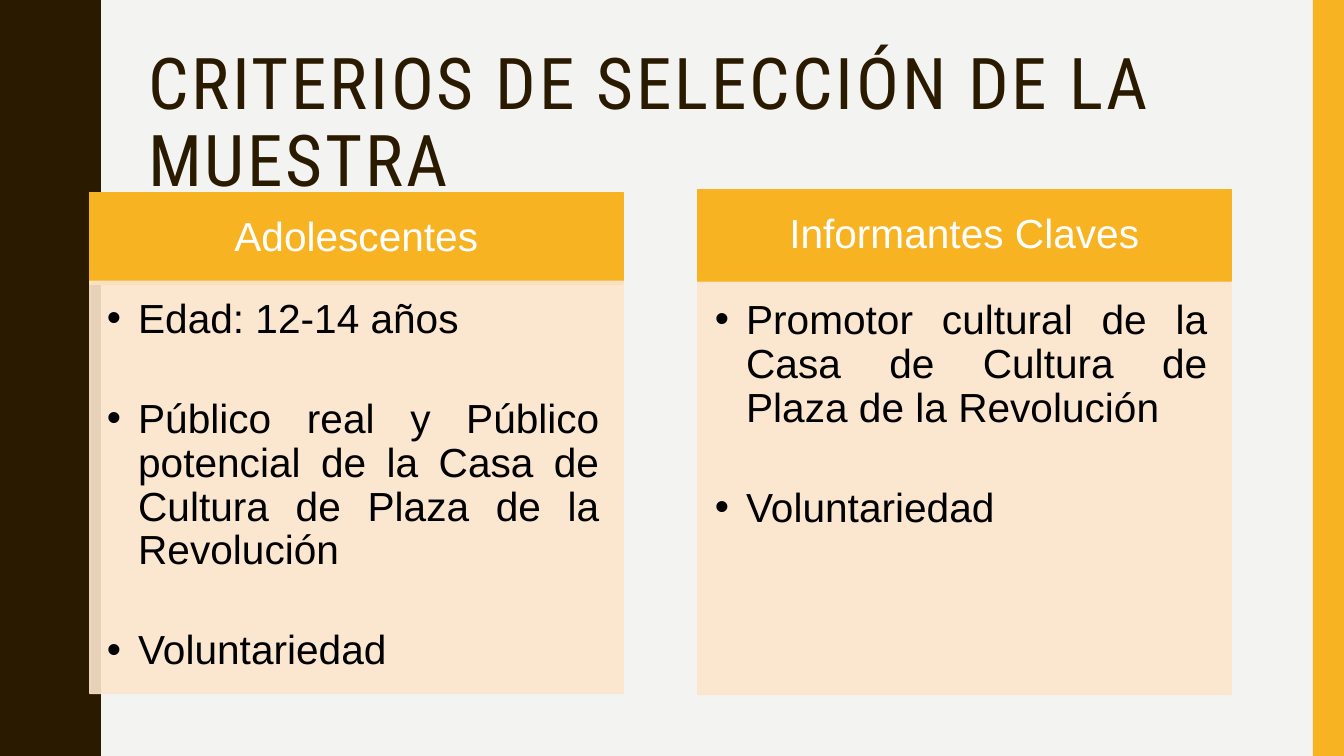
from lxml.etree import SubElement
from pptx import Presentation
from pptx.dml.color import RGBColor
from pptx.enum.shapes import MSO_SHAPE as Shape
from pptx.enum.text import MSO_ANCHOR as Anchor, PP_ALIGN as Align
from pptx.oxml.ns import qn
from pptx.util import Inches, Pt

BROWN, AMBER, PEACH, PAPER = "2A1A00", "F8B323", "FCE5CD", "F3F3F2"
WHITE, BLACK = "FFFFFF", "000000"
WAVE_HEIGHT = 1.5
HALF_WAVE = [
    (0.78, 0), (0.78, 0.07), (0.79, 0.14), (0.8, 0.2), (0.81, 0.25),
    (0.83, 0.29), (0.85, 0.33), (0.87, 0.38), (0.89, 0.42), (0.91, 0.46),
    (0.93, 0.5), (0.95, 0.55), (0.96, 0.61), (0.97, 0.68), (0.97, 0.75),
]
COLUMNS = [
    (0.89, 1.91, 2.79, "Adolescentes", [
        "Edad: 12-14 años",
        "Público real y Público potencial de la Casa de Cultura de Plaza de la Revolución",
        "Voluntariedad",
    ]),
    (6.92, 1.88, 2.8, "Informantes Claves", [
        "Promotor cultural de la Casa de Cultura de Plaza de la Revolución",
        "Voluntariedad",
    ]),
]


def paint(fill, color, opacity=100):
    fill.solid()
    fill.fore_color.rgb = RGBColor.from_string(color)
    if opacity < 100:
        tint = fill._xPr.find(qn("a:solidFill"))[0]
        SubElement(tint, qn("a:alpha")).set("val", str(opacity * 1000))


def style(para, font, size, color, align):
    para.font.name = font
    para.font.size = Pt(size)
    para.font.color.rgb = RGBColor.from_string(color)
    para.alignment = align
    para.line_spacing = 0.9


def add_block(page, left, top, width, height, color, opacity=100):
    block = page.shapes.add_shape(
        Shape.RECTANGLE, Inches(left), Inches(top), Inches(width), Inches(height))
    block.shadow.inherit = False
    paint(block.fill, color, opacity)
    paint(block.line.fill, color, opacity)
    block.line.width = Pt(1)
    return block


def set_margins(frame, left, top, right, bottom):
    frame.word_wrap = True
    frame.margin_left, frame.margin_top = Inches(left), Inches(top)
    frame.margin_right, frame.margin_bottom = Inches(right), Inches(bottom)


def add_wavy_edge(page, height):
    period = HALF_WAVE + [(x, WAVE_HEIGHT - y) for x, y in HALF_WAVE[-2::-1]]
    points = [(x, y + wave * WAVE_HEIGHT)
              for wave in range(round(height / WAVE_HEIGHT)) for x, y in period]
    builder = page.shapes.build_freeform(0, 0, scale=Inches(1))
    builder.add_line_segments(points + [(0, height)], close=True)
    edge = builder.convert_to_shape()
    edge.shadow.inherit = False
    paint(edge.fill, BROWN)
    edge.line.fill.background()


def add_side_band(page, left, width, height):
    band = add_block(page, left, 0, width, height, AMBER)
    band.line.fill.background()


def add_title(page, left, top, width, height):
    title = page.shapes.title
    title.left, title.top = Inches(left), Inches(top)
    title.width, title.height = Inches(width), Inches(height)
    title.text = "CRITERIOS DE SELECCIÓN DE LA MUESTRA"
    title.text_frame.vertical_anchor = Anchor.MIDDLE
    para = title.text_frame.paragraphs[0]
    style(para, "Roboto Condensed", 51, BROWN, Align.LEFT)
    para.runs[0].font._element.set("spc", "200")


def add_heading(page, left, top, width, height, text):
    frame = add_block(page, left, top, width, height, AMBER).text_frame
    set_margins(frame, 0.23, 0.13, 0.23, 0.13)
    frame.vertical_anchor = Anchor.MIDDLE
    frame.text = text
    style(frame.paragraphs[0], "Arial", 29, WHITE, Align.CENTER)


def add_criteria(page, left, top, width, height, criteria):
    frame = add_block(page, left, top, width, height, PEACH, 90).text_frame
    set_margins(frame, 0.17, 0.17, 0.23, 0.25)
    frame.vertical_anchor = Anchor.TOP
    frame.text = "\n".join(criteria)
    for para in frame.paragraphs:
        style(para, "Arial", 29, BLACK, Align.JUSTIFY)
        para.space_after = Pt(40)
        props = para._p.get_or_add_pPr()
        props.set("marL", str(Inches(0.31)))
        props.set("indent", str(-Inches(0.31)))
        bullet_font = SubElement(props, qn("a:buFont"))
        bullet_font.set("typeface", "Arial")
        SubElement(props, qn("a:buChar")).set("char", "•")
        props.append(props.find(qn("a:defRPr")))


def build_slide(deck):
    page = deck.slides.add_slide(deck.slide_layouts[5])
    paint(page.background.fill, PAPER)
    add_wavy_edge(page, 7.5)
    add_side_band(page, 13.02, 0.31, 7.5)
    add_title(page, 1.37, 0.42, 11.13, 1.63)
    for left, top, body_top, heading, criteria in COLUMNS:
        add_heading(page, left, top, 5.29, 0.91, heading)
        add_criteria(page, left, body_top, 5.29, 4.09, criteria)


def main():
    deck = Presentation()
    deck.slide_width, deck.slide_height = Inches(13.33), Inches(7.5)
    build_slide(deck)
    deck.save("out.pptx")


if __name__ == "__main__":
    main()
